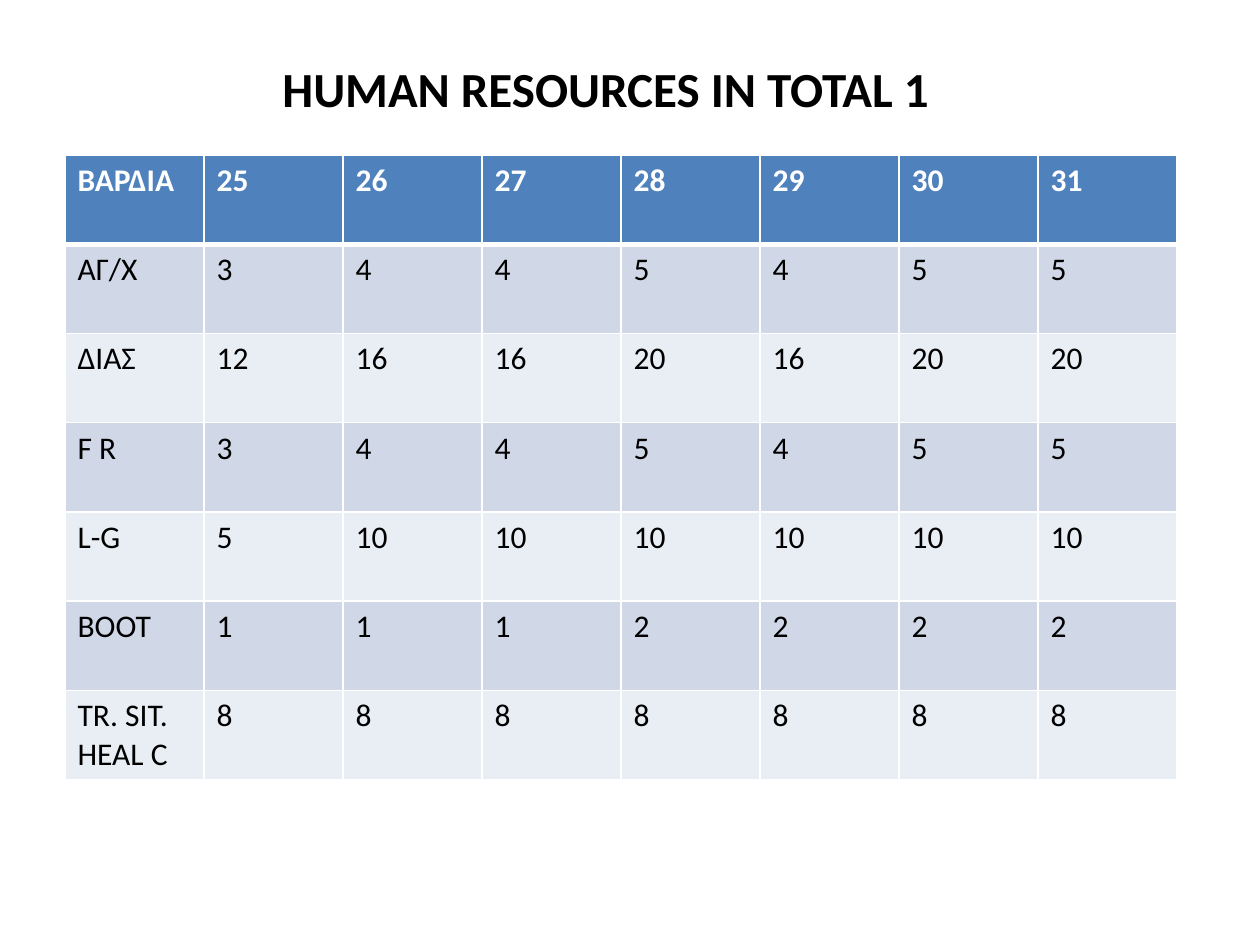
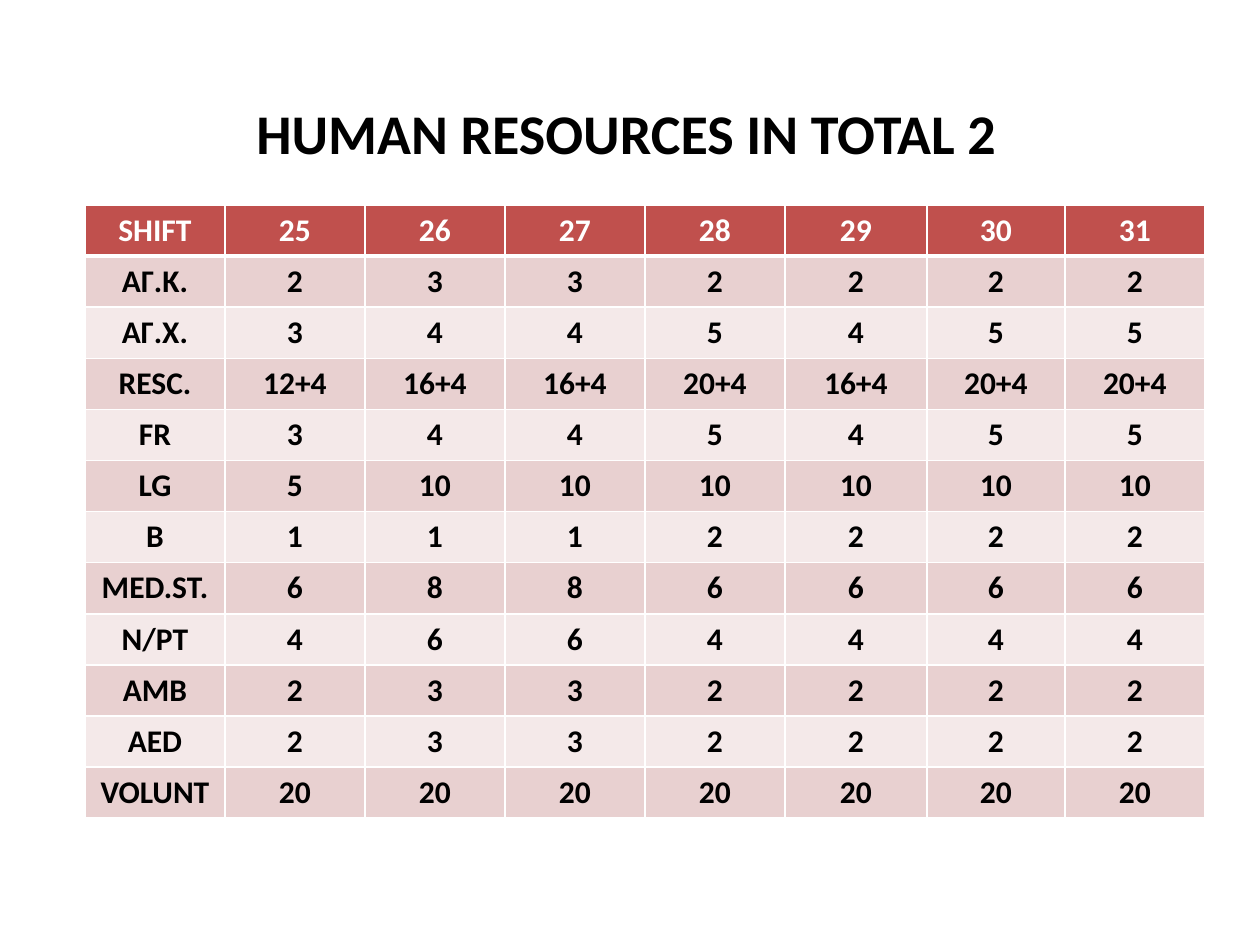
from dataclasses import dataclass

from lxml.etree import SubElement
from pptx import Presentation
from pptx.dml.color import RGBColor
from pptx.enum.text import MSO_ANCHOR, MSO_AUTO_SIZE, PP_ALIGN
from pptx.oxml.ns import qn
from pptx.util import Emu, Pt

# Shared style
PX = 914400 / 126
FONT = "Calibri"
BLACK = RGBColor(0x00, 0x00, 0x00)
WHITE = RGBColor(0xFF, 0xFF, 0xFF)
BLUE = RGBColor(0x4F, 0x81, 0xBD)
BLUE_BAND = RGBColor(0xD0, 0xD8, 0xE8)
BLUE_LIGHT = RGBColor(0xE9, 0xED, 0xF4)
RED = RGBColor(0xC0, 0x50, 0x4D)
RED_BAND = RGBColor(0xE8, 0xD0, 0xD0)
RED_LIGHT = RGBColor(0xF4, 0xE9, 0xE9)

TABLE_SIZE = 18
THIN, THICK = 1, 3
DAYS = "25 26 27 28 29 30 31"


@dataclass
class TableStyle:
    header: RGBColor
    bands: tuple
    align: PP_ALIGN
    bold_body: bool


BLUE_STYLE = TableStyle(BLUE, (BLUE_BAND, BLUE_LIGHT), PP_ALIGN.LEFT, False)
RED_STYLE = TableStyle(RED, (RED_BAND, RED_LIGHT), PP_ALIGN.CENTER, True)

# Staff per shift and day
TOTAL_1 = [
    ("ΒΑΡΔΙΑ", DAYS),
    ("ΑΓ/Χ", "3 4 4 5 4 5 5"),
    ("ΔΙΑΣ", "12 16 16 20 16 20 20"),
    ("F R", "3 4 4 5 4 5 5"),
    ("L-G", "5 10 10 10 10 10 10"),
    ("BOOT", "1 1 1 2 2 2 2"),
    ("ΤR. SIT.\nHEAL C", "8 8 8 8 8 8 8"),
]
TOTAL_2 = [
    ("SHIFT", DAYS),
    ("AΓ.Κ.", "2 3 3 2 2 2 2"),
    ("ΑΓ.Χ.", "3 4 4 5 4 5 5"),
    ("RESC.", "12+4 16+4 16+4 20+4 16+4 20+4 20+4"),
    ("FR", "3 4 4 5 4 5 5"),
    ("LG", "5 10 10 10 10 10 10"),
    ("B", "1 1 1 2 2 2 2"),
    ("MED.ST.", "6 8 8 6 6 6 6"),
    ("N/PT", "4 6 6 4 4 4 4"),
    ("AMB", "2 3 3 2 2 2 2"),
    ("AED", "2 3 3 2 2 2 2"),
    ("VOLUNT", "20 20 20 20 20 20 20"),
]


def px(length):
    return Emu(round(length * PX))


def set_attributes(target, values):
    for name, value in values.items():
        setattr(target, name, value)


def format_text(text_frame, size, color, bold, align):
    for paragraph in text_frame.paragraphs:
        paragraph.alignment = align
        set_attributes(paragraph.font, {"name": FONT, "size": Pt(size), "bold": bold})
        paragraph.font.color.rgb = color


def set_borders(cell, top, bottom):
    """Draw white lines; they must precede the fill in the cell properties."""
    properties = cell._tc.get_or_add_tcPr()
    widths = {"a:lnL": THIN, "a:lnR": THIN, "a:lnT": top, "a:lnB": bottom}
    for index, (tag, width) in enumerate(widths.items()):
        line = SubElement(properties, qn(tag), w=str(Pt(width)))
        fill = SubElement(line, qn("a:solidFill"))
        SubElement(fill, qn("a:srgbClr"), val=str(WHITE))
        properties.insert(index, line)


def add_title(slide, box, text, size):
    title = slide.shapes.title
    set_attributes(title, dict(zip(("left", "top", "width", "height"), map(px, box))))
    title.text = text
    set_attributes(title.text_frame, {
        "word_wrap": True,
        "auto_size": MSO_AUTO_SIZE.NONE,
        "vertical_anchor": MSO_ANCHOR.TOP,
    })
    format_text(title.text_frame, size, BLACK, True, PP_ALIGN.CENTER)


def add_shift_table(slide, box, column_widths, shifts, style):
    frame = slide.shapes.add_table(len(shifts), len(column_widths), *map(px, box))
    table = frame.table
    table.horz_banding = False
    for column, width in zip(table.columns, column_widths):
        column.width = px(width)
    for row_index, (label, counts) in enumerate(shifts):
        table.rows[row_index].height = px(box[3] / len(shifts))
        is_header = row_index == 0
        fill = style.header if is_header else style.bands[(row_index - 1) % 2]
        color = WHITE if is_header else BLACK
        for column_index, text in enumerate([label, *counts.split()]):
            cell = table.cell(row_index, column_index)
            cell.text = text
            cell.fill.solid()
            cell.fill.fore_color.rgb = fill
            format_text(cell.text_frame, TABLE_SIZE, color,
                        is_header or style.bold_body, style.align)
            set_borders(cell, top=THICK if row_index == 1 else THIN,
                        bottom=THICK if is_header else THIN)


def add_title_only_slide(presentation):
    return presentation.slides.add_slide(presentation.slide_layouts[5])


def main():
    presentation = Presentation()
    set_attributes(presentation, {"slide_width": px(1260), "slide_height": px(945)})

    # First total
    slide = add_title_only_slide(presentation)
    add_shift_table(slide, (65, 155, 1112, 625), [139] * 8, TOTAL_1, BLUE_STYLE)
    add_title(slide, (233, 52, 745, 72), "HUMAN RESOURCES IN TOTAL 1", 28)

    # Second total
    slide = add_title_only_slide(presentation)
    widths = [140] * 5 + [142, 138, 140]
    add_shift_table(slide, (85, 205, sum(widths), 613), widths, TOTAL_2, RED_STYLE)
    add_title(slide, (200, 92, 853, 81), "HUMAN RESOURCES IN TOTAL 2", 32)

    presentation.save("out.pptx")


if __name__ == "__main__":
    main()
